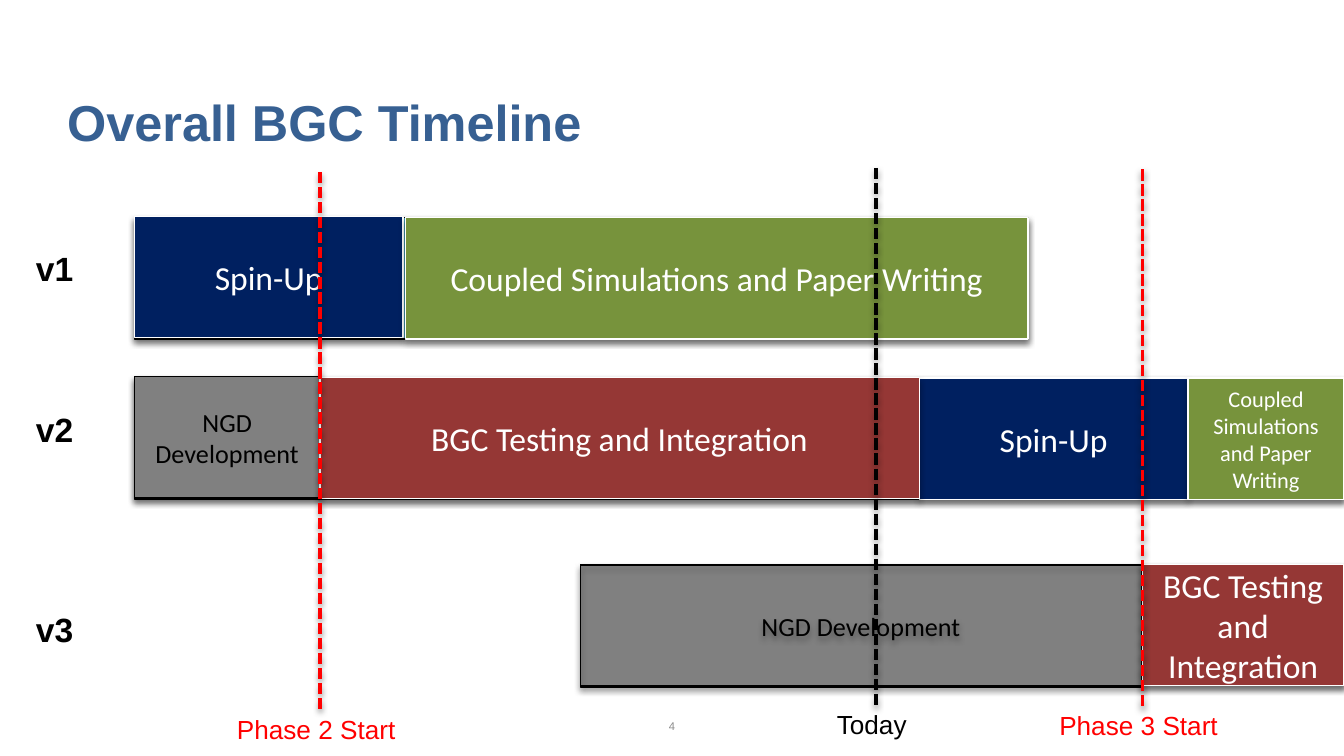
from lxml import etree
from pptx import Presentation
from pptx.dml.color import RGBColor
from pptx.enum.dml import MSO_LINE
from pptx.enum.shapes import MSO_CONNECTOR, MSO_SHAPE
from pptx.enum.text import MSO_ANCHOR, PP_ALIGN
from pptx.oxml import parse_xml
from pptx.oxml.ns import nsdecls
from pptx.util import Pt

BLACK = RGBColor(0x00, 0x00, 0x00)
WHITE = RGBColor(0xFF, 0xFF, 0xFF)
RED = RGBColor(0xFF, 0x00, 0x00)
NAVY = RGBColor(0x00, 0x20, 0x60)
GREEN = RGBColor(0x77, 0x93, 0x3C)
BRICK = RGBColor(0x95, 0x37, 0x35)
GRAY = RGBColor(0x80, 0x80, 0x80)
TEAL = RGBColor(0x4B, 0xAC, 0xC6)
TITLE_BLUE = RGBColor(0x37, 0x60, 0x92)
NUMBER_GRAY = RGBColor(0x8C, 0x8C, 0x8C)

# Content
TITLE = "Overall BGC Timeline"
PAGE_NUMBER = "4"
COUPLED = "Coupled Simulations and Paper Writing"
TESTING = "BGC Testing and Integration"
NGD = "NGD Development"

# Time positions along the slide
START, PHASE_2, TODAY, PHASE_3, END = 72, 171.4, 469.4, 612, 720
V1_COUPLED, V1_END = 217.2, 550.8
V2_SPIN_UP, V2_COUPLED = 492.5, 636.5
V3_START = 311
BAR_HEIGHT = 65

# Version, label top
VERSIONS = [("v1", 129), ("v2", 215.3), ("v3", 322.6)]

# Text, left, right, top, fill, line colour, text size
BARS = [
    ("", START, V1_END, 116.6, TEAL, BLACK, 18),
    ("", START, END, 202.3, TEAL, BLACK, 18),
    ("", V3_START, END, 302.4, GRAY, BLACK, 18),
    ("Spin-Up", START, 216, 116, NAVY, WHITE, 18),
    ("Spin-Up", V2_SPIN_UP, V2_COUPLED, 202.5, NAVY, WHITE, 18),
    (NGD, START, PHASE_2, 201.8, GRAY, BLACK, 14),
    (NGD, V3_START, 611.5, 303, None, BLACK, 14),
    (TESTING, PHASE_2, V2_SPIN_UP, 202.2, BRICK, WHITE, 18),
    (TESTING, PHASE_3, END, 302.4, BRICK, WHITE, 18),
    (COUPLED, V1_COUPLED, V1_END, 116.6, GREEN, WHITE, 18),
    (COUPLED, V2_COUPLED, END, 202.6, GREEN, WHITE, 12),
]

# Text, x, line top, line bottom, label centre, label top, colour
MILESTONES = [
    ("Today", TODAY, 90, 379, 467, 375.8, BLACK),
    ("Phase 3 Start", PHASE_3, 90.7, 379, 610, 376.6, RED),
    ("Phase 2 Start", PHASE_2, 92.2, 381.6, 169.4, 378.7, RED),
]


def add_shadow(s, distance, alpha):
    """Give a shape or connector a soft shadow falling straight down."""
    for old in s._element.spPr.findall(
            "{http://schemas.openxmlformats.org/drawingml/2006/main}effectLst"):
        s._element.spPr.remove(old)
    s._element.spPr.append(parse_xml(
        f'<a:effectLst {nsdecls("a")}>'
        f'<a:outerShdw blurRad="{Pt(3.15)}" dist="{Pt(distance)}" dir="5400000" rotWithShape="0">'
        f'<a:srgbClr val="000000"><a:alpha val="{alpha * 1000}"/></a:srgbClr>'
        '</a:outerShdw></a:effectLst>'))


def set_text(s, text, size, color, font="Arial", bold=False,
             align=PP_ALIGN.CENTER, anchor=MSO_ANCHOR.TOP):
    tf = s.text_frame
    tf.word_wrap = True
    tf.vertical_anchor = anchor
    p = tf.paragraphs[0]
    p.text = text
    p.alignment = align
    p.font.name = font
    p.font.size = Pt(size)
    p.font.bold = bold
    p.font.color.rgb = color


def add_label(left, top, width, height, text, size, color, inset=True, **style):
    s = slide.shapes.add_textbox(Pt(left), Pt(top), Pt(width), Pt(height))
    set_text(s, text, size, color, **style)
    if not inset:
        tf = s.text_frame
        tf.margin_left = tf.margin_right = tf.margin_top = tf.margin_bottom = 0


prs = Presentation()
prs.slide_width, prs.slide_height = Pt(720), Pt(405)
slide = prs.slides.add_slide(prs.slide_layouts[6])

# Title
add_label(36, 16.6, 648, 64.8, TITLE, 27, TITLE_BLUE, inset=False, bold=True,
          align=PP_ALIGN.LEFT, anchor=MSO_ANCHOR.BOTTOM)

# Version labels
for version, top in VERSIONS:
    add_label(12.2, top, 43.2, 29, version, 18, BLACK, bold=True, align=PP_ALIGN.LEFT)

# Timeline bars
for text, left, right, top, fill, line, size in BARS:
    s = slide.shapes.add_shape(MSO_SHAPE.RECTANGLE, Pt(left), Pt(top),
                               Pt(right - left), Pt(BAR_HEIGHT))
    if fill is None:
        s.fill.background()
    else:
        s.fill.solid()
        s.fill.fore_color.rgb = fill
    s.line.color.rgb = line
    s.line.width = Pt(0.75)
    add_shadow(s, 1.8, 35)
    if text:
        set_text(s, text, size, line, font="Calibri", anchor=MSO_ANCHOR.MIDDLE)

# Milestone lines and their labels
for text, x, top, bottom, centre, label_top, color in MILESTONES:
    s = slide.shapes.add_connector(MSO_CONNECTOR.STRAIGHT, Pt(x), Pt(top), Pt(x), Pt(bottom))
    s.line.color.rgb = color
    s.line.width = Pt(2)
    s.line.dash_style = MSO_LINE.SQUARE_DOT
    add_shadow(s, 1.6, 38)
    add_label(centre - 64.5, label_top, 129, 24.2, text, 14, color)

# Page number
add_label(306, 384.5, 108, 8, PAGE_NUMBER, 6, NUMBER_GRAY, inset=False,
          anchor=MSO_ANCHOR.BOTTOM)

prs.save("out.pptx")
